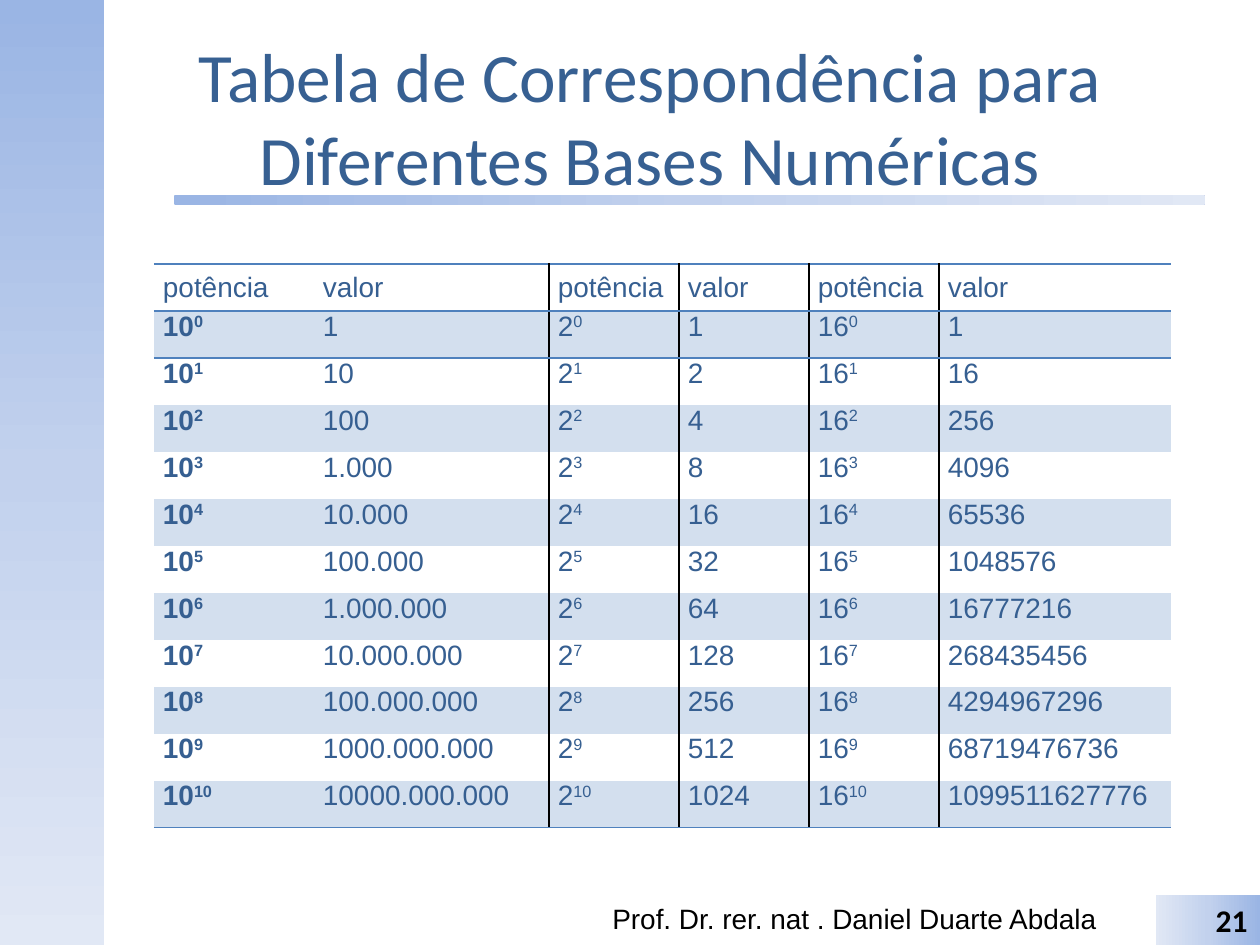
from lxml.etree import SubElement
from pptx import Presentation
from pptx.dml.color import RGBColor
from pptx.enum.shapes import MSO_SHAPE
from pptx.enum.text import MSO_ANCHOR, PP_ALIGN
from pptx.oxml import parse_xml
from pptx.oxml.ns import nsdecls, qn
from pptx.util import Pt

PIXEL = 914400 / 126
NO_GRID_STYLE = "{2D5ABB26-0587-4C30-8999-92F81FD0307C}"
GRADIENT = ((0, "9AB5E4"), (50, "C2D1ED"), (100, "E1E8F5"))


def box(*lengths):
    return [round(length * PIXEL) for length in lengths]


def format_text(paragraph, font_name, size, color, alignment, bold=False):
    paragraph.alignment = alignment
    for run in paragraph.runs:
        run.font.name = font_name
        run.font.size = Pt(size)
        run.font.bold = bold
        run.font.color.rgb = RGBColor.from_string(color)


presentation = Presentation()
presentation.slide_width, presentation.slide_height = box(1260, 945)
slide = presentation.slides.add_slide(presentation.slide_layouts[5])

bands = []
for preset, position, angle in (
    (MSO_SHAPE.RECTANGLE, (0, 0, 104, 945), 90),
    (MSO_SHAPE.ROUNDED_RECTANGLE, (174, 195, 1031, 10), 0),
    (MSO_SHAPE.RECTANGLE, (1156, 895, 104, 50), 180),
):
    band = slide.shapes.add_shape(preset, *box(*position))
    band.shadow.inherit = False
    band.line.fill.background()
    stops = "".join(
        f'<a:gs pos="{place * 1000}"><a:srgbClr val="{color}"/></a:gs>'
        for place, color in GRADIENT
    )
    gradient = parse_xml(
        f'<a:gradFill {nsdecls("a")} rotWithShape="1"><a:gsLst>{stops}</a:gsLst>'
        f'<a:lin ang="{angle * 60000}" scaled="0"/></a:gradFill>'
    )
    band._element.spPr.find(qn("a:prstGeom")).addnext(gradient)
    bands.append(band)

title = slide.shapes.title
title.left, title.top, title.width, title.height = box(104, 38, 1092, 157)
title.text_frame.text = "Tabela de Correspondência para Diferentes Bases Numéricas"
title.text_frame.vertical_anchor = MSO_ANCHOR.MIDDLE
format_text(title.text_frame.paragraphs[0], "Calibri", 39.6, "376092", PP_ALIGN.CENTER)

decimal_values = [
    "1", "10", "100", "1.000", "10.000", "100.000", "1.000.000", "10.000.000",
    "100.000.000", "1000.000.000", "10000.000.000",
]
rows = [["potência", "valor"] * 3]
for exponent, decimal_value in enumerate(decimal_values):
    rows.append(["10", decimal_value, "2", str(2**exponent), "16", str(16**exponent)])

column_widths = box(160, 235, 130, 130, 130, 232)
row_height = box(47)[0]
table_frame = slide.shapes.add_table(
    len(rows), len(column_widths), *box(154, 264), sum(column_widths), row_height * len(rows)
)
table = table_frame.table
table.first_row = False
table.horz_banding = False
table._tbl.tblPr.find(qn("a:tableStyleId")).text = NO_GRID_STYLE
for column, width in zip(table.columns, column_widths):
    column.width = width

last_row = len(rows) - 1
for row_index, values in enumerate(rows):
    table.rows[row_index].height = row_height
    for column_index, value in enumerate(values):
        cell = table.cell(row_index, column_index)
        cell.margin_left = cell.margin_right = box(9)[0]
        cell.margin_top = cell.margin_bottom = 0
        cell.vertical_anchor = MSO_ANCHOR.TOP if row_index else MSO_ANCHOR.MIDDLE
        paragraph = cell.text_frame.paragraphs[0]
        paragraph.text = value
        if row_index and column_index % 2 == 0:
            power = paragraph.add_run()
            power.text = str(row_index - 1)
            power._r.get_or_add_rPr().set("baseline", "30000")
        bold = row_index > 0 and column_index == 0
        format_text(paragraph, "Arial", 16, "365F91", PP_ALIGN.JUSTIFY, bold)

        borders = (
            ("a:lnL", column_index in (2, 4), "000000"),
            ("a:lnR", column_index in (1, 3), "000000"),
            ("a:lnT", row_index in (0, 1), "4F81BD"),
            ("a:lnB", row_index in (0, last_row), "4F81BD"),
        )
        properties = cell._tc.get_or_add_tcPr()
        for tag, visible, color in borders:
            if visible:
                line = SubElement(properties, qn(tag), w=str(Pt(1)))
                fill = SubElement(line, qn("a:solidFill"))
                SubElement(fill, qn("a:srgbClr"), val=color)
        if row_index % 2:
            cell.fill.solid()
            cell.fill.fore_color.rgb = RGBColor.from_string("D3DFEE")
        else:
            cell.fill.background()

author = slide.shapes.add_textbox(*box(600, 895, 528, 50))
author.text_frame.word_wrap = True
author.text_frame.text = "Prof. Dr. rer. nat . Daniel Duarte Abdala"
format_text(author.text_frame.paragraphs[0], "Arial", 16, "000000", PP_ALIGN.LEFT)

page_number = bands[-1].text_frame
page_number.text = "21"
page_number.vertical_anchor = MSO_ANCHOR.MIDDLE
format_text(page_number.paragraphs[0], "Calibri", 18, "000000", PP_ALIGN.RIGHT, True)

presentation.save("out.pptx")
